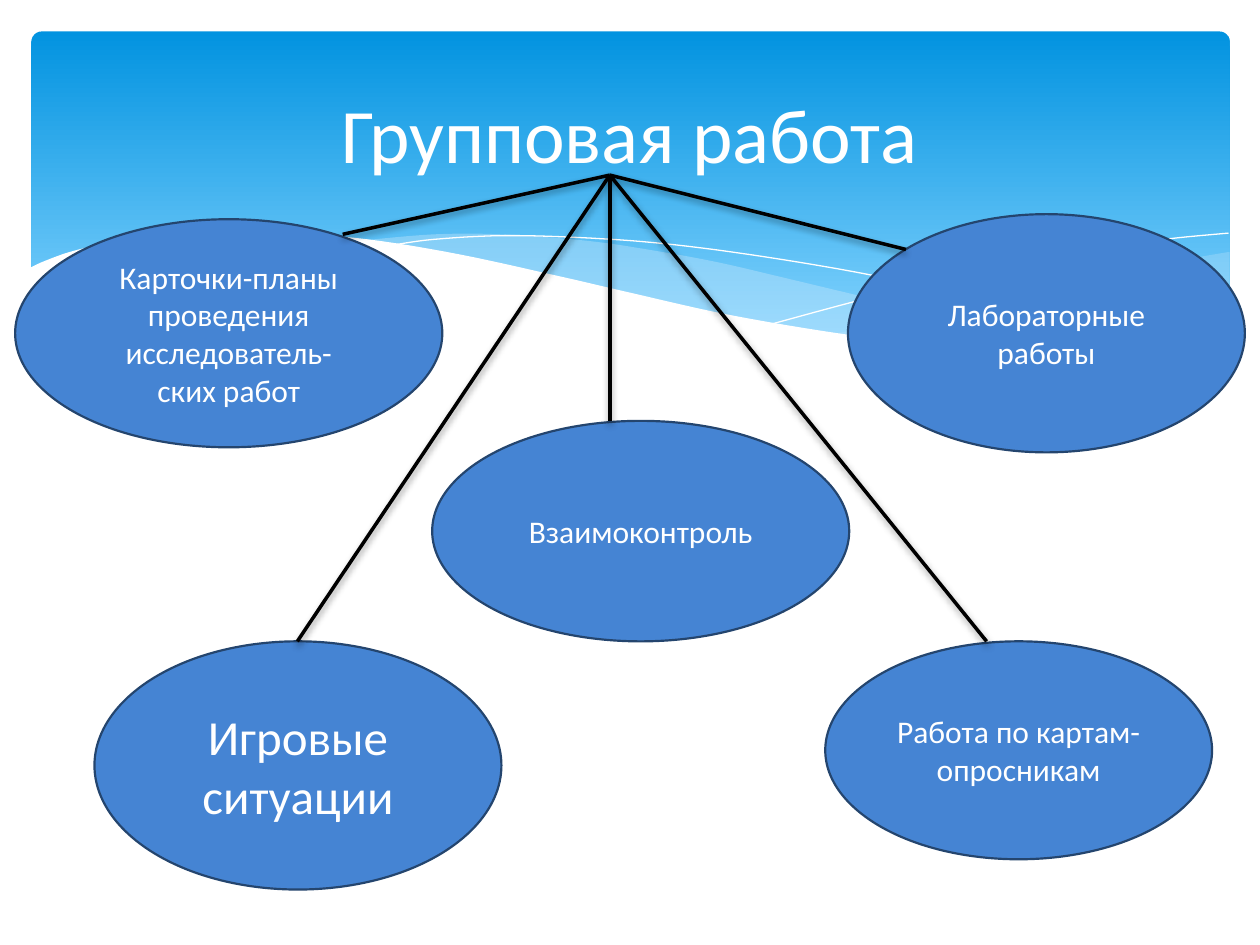
from lxml.etree import SubElement
from pptx import Presentation
from pptx.dml.color import RGBColor
from pptx.enum.shapes import MSO_CONNECTOR, MSO_SHAPE
from pptx.enum.text import MSO_ANCHOR, PP_ALIGN
from pptx.oxml.ns import qn
from pptx.util import Emu, Pt

PIXEL = 9144
STEPS = 6
WHITE, OVAL_FILL, OVAL_LINE, BLACK = "FFFFFF", "4584D3", "24456E", "000000"
WAVE_COLOR = "C6E7FC"

RIGHT_WAVE = [
    [(950, 175), (910, 182), (866, 191), (836, 198), (780, 212), (728, 223), (681, 232), (636, 240)],
    [(636, 240), (680, 246), (732, 250), (778, 253), (829, 251), (872, 245), (910, 237), (938, 227),
     (951, 222)],
    [(951, 175)],
]
CENTER_WAVE = [
    [(868, 248), (782, 235), (681, 215), (604, 197), (544, 183), (489, 173), (440, 166), (374, 161),
     (319, 161), (261, 166)],
    [(261, 166), (317, 174), (379, 186), (424, 197), (505, 215), (576, 230), (640, 241), (697, 249),
     (760, 253), (813, 253), (868, 248)],
]
LONG_CREST = [[(284, 170), (319, 165), (376, 162), (444, 164), (508, 169), (583, 179), (670, 194),
               (770, 216), (882, 247)]]
RIGHT_CREST = [[(588, 232), (670, 210), (751, 191), (841, 174), (899, 165), (950, 160)]]
WHITE_WAVE = [
    [(952, 221), (905, 237), (850, 248), (784, 252), (719, 249), (643, 240), (554, 225), (478, 208),
     (422, 195), (340, 177), (267, 165), (205, 160), (152, 159), (107, 161), (70, 166), (34, 174),
     (11, 182), (-2, 188)],
    [(-2, 304)],
    [(952, 304)],
]

OVALS = [
    ((12, 174, 339, 181), 18, ["Карточки-планы проведения исследователь-", "ских работ"]),
    ((343, 334, 331, 175), 18, ["Взаимоконтроль"]),
    ((75, 509, 323, 197), 28, ["Игровые", "ситуации"]),
    ((655, 509, 307, 173), 18, ["Работа по картам-опросникам"]),
    ((673, 170, 315, 189), 18, ["Лабораторные работы"]),
]
RAY_START = (484, 139)
RAY_ENDS = [(272, 186), (236, 509), (484, 334), (783, 509), (719, 198)]


def px(*lengths):
    """Turn px lengths into EMU."""
    return [Emu(round(length * PIXEL)) for length in lengths]


def color(value):
    """Turn a hex string into a colour."""
    return RGBColor.from_string(value)


def apply(target, values):
    """Set attributes from a dict of format values."""
    for name, value in values.items():
        setattr(target, name, value)


def paint(shape, fill=None, opacity=100, line=None, width=0):
    """Set the fill and line of a shape and drop its shadow."""
    shape.shadow.inherit = False
    if fill:
        shape.fill.solid()
        shape.fill.fore_color.rgb = color(fill)
        if opacity < 100:
            tint = shape.fill._xPr.find(qn("a:solidFill"))[0]
            SubElement(tint, qn("a:alpha"), val=str(opacity * 1000))
    else:
        shape.fill.background()
    if line:
        shape.line.color.rgb = color(line)
        shape.line.width = Pt(width)
    else:
        shape.line.fill.background()


def write(shape, lines, size):
    """Write centred white paragraphs in a shape."""
    frame = shape.text_frame
    apply(frame, {"word_wrap": True, "vertical_anchor": MSO_ANCHOR.MIDDLE, "text": "\n".join(lines)})
    for paragraph in frame.paragraphs:
        paragraph.alignment = PP_ALIGN.CENTER
        for run in paragraph.runs:
            apply(run.font, {"name": "Calibri", "size": Pt(size)})
            run.font.color.rgb = color(WHITE)


def smooth_points(knots):
    """Return points on a Catmull-Rom curve through the knots."""
    padded = [knots[0], *knots, knots[-1]]
    points = [knots[0]]
    for a, b, c, d in zip(padded, padded[1:], padded[2:], padded[3:]):
        for step in range(1, STEPS + 1):
            t = step / STEPS
            points.append(tuple(
                (2 * q + (r - p) * t + (2 * p - 5 * q + 4 * r - s) * t ** 2
                 + (3 * q - p - 3 * r + s) * t ** 3) / 2
                for p, q, r, s in zip(a, b, c, d)))
    return points


def add_wave(slide, box, runs, closed=True, **style):
    """Draw smooth runs, joined end to end, relative to the box."""
    left, top = box[:2]
    points = [px(left + x, top + y) for knots in runs for x, y in smooth_points(knots)]
    builder = slide.shapes.build_freeform(*points[0], scale=1.0)
    builder.add_line_segments(points[1:], close=closed)
    paint(builder.convert_to_shape(), **style)


def add_backdrop(slide, box):
    """Draw the blue gradient panel and the waves at its foot."""
    panel = slide.shapes.add_shape(MSO_SHAPE.ROUNDED_RECTANGLE, *px(*box))
    panel.adjustments[0] = 0.03
    paint(panel)
    panel.fill.gradient()
    panel.fill.gradient_angle = 270
    for stop, position, value in zip(panel.fill.gradient_stops, (0, 0.9), ("0293E0", "83D3FE")):
        stop.position = position
        stop.color.rgb = color(value)
    add_wave(slide, box, RIGHT_WAVE, fill=WAVE_COLOR, opacity=29)
    add_wave(slide, box, CENTER_WAVE, fill=WAVE_COLOR, opacity=40)
    for crest in (LONG_CREST, RIGHT_CREST):
        add_wave(slide, box, crest, closed=False, line=WHITE)
    add_wave(slide, box, WHITE_WAVE, fill=WHITE)


def add_title(slide, box, text):
    """Place the slide title."""
    write(slide.shapes.add_textbox(*px(*box)), [text], 44)


def add_oval(slide, box, size, lines):
    """Place one oval with its text."""
    oval = slide.shapes.add_shape(MSO_SHAPE.OVAL, *px(*box))
    paint(oval, fill=OVAL_FILL, line=OVAL_LINE, width=1.25)
    write(oval, lines, size)


def add_ray(slide, start, end):
    """Draw a black line with a soft shadow below it."""
    ray = slide.shapes.add_connector(MSO_CONNECTOR.STRAIGHT, *px(*start, *end))
    ray.line.color.rgb = color(BLACK)
    ray.line.width = Pt(2)
    effects = SubElement(ray._element.spPr, qn("a:effectLst"))
    shadow = SubElement(effects, qn("a:outerShdw"), blurRad=str(Pt(4)), dist=str(Pt(2)),
                        dir="5400000", rotWithShape="0")
    tint = SubElement(shadow, qn("a:srgbClr"), val=BLACK)
    SubElement(tint, qn("a:alpha"), val="38000")


def main():
    """Build the slide and save it."""
    presentation = Presentation()
    width, height = px(1000, 750)
    apply(presentation, {"slide_width": width, "slide_height": height})
    slide = presentation.slides.add_slide(presentation.slide_layouts[6])
    add_backdrop(slide, (25, 25, 951, 270))
    add_title(slide, (50, 37, 900, 137), "Групповая работа")
    for box, size, lines in OVALS:
        add_oval(slide, box, size, lines)
    for end in RAY_ENDS:
        add_ray(slide, RAY_START, end)
    presentation.save("out.pptx")


if __name__ == "__main__":
    main()
